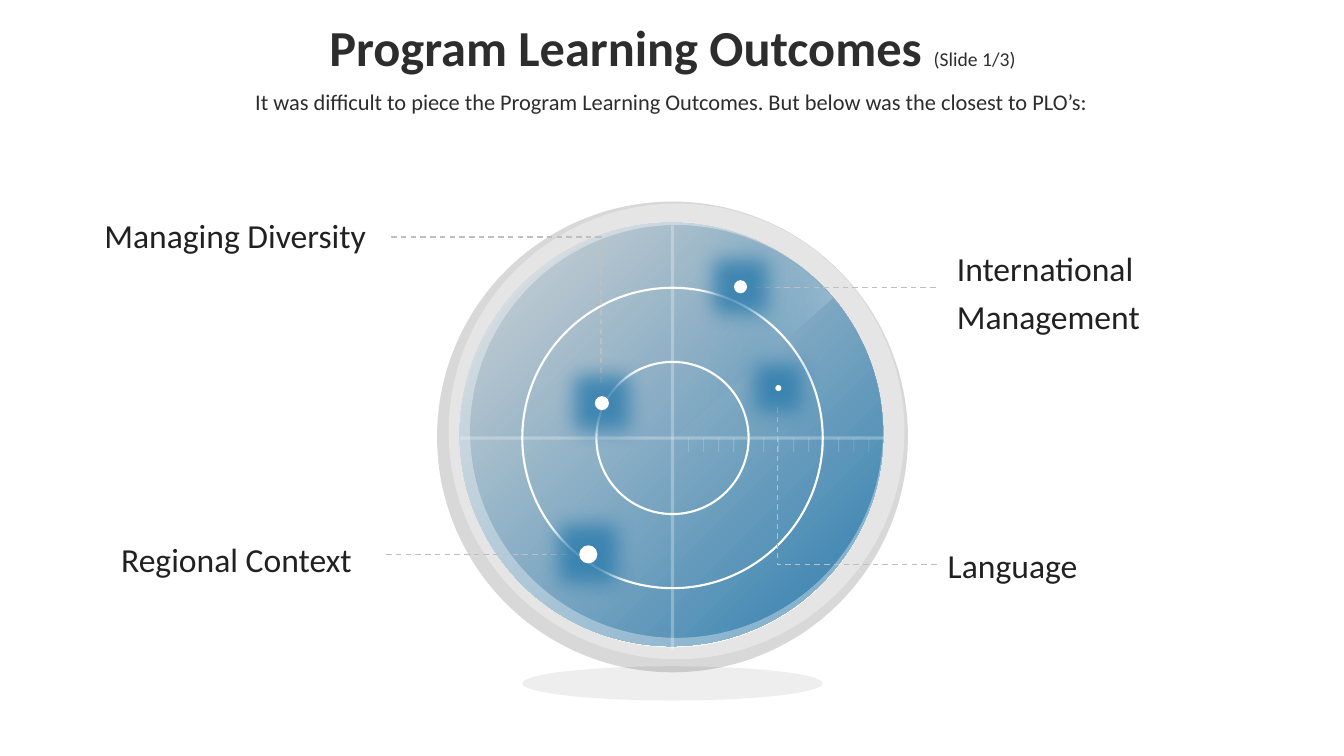
import dataclasses
import typing

import pptx
import pptx.dml.color
import pptx.enum.dml
import pptx.enum.shapes
import pptx.enum.text
import pptx.oxml
import pptx.oxml.ns
import pptx.util

Color = pptx.dml.color.RGBColor
Preset = pptx.enum.shapes.MSO_SHAPE
Align = pptx.enum.text.PP_ALIGN
Anchor = pptx.enum.text.MSO_ANCHOR
Point = tuple[float, float]

WHITE = Color(0xFF, 0xFF, 0xFF)
INK = Color(0x2D, 0x2D, 0x2D)
LABEL_INK = Color(0x21, 0x21, 0x21)
RIM_GRAY = Color(0xD8, 0xD8, 0xD8)
LEADER_GRAY = Color(0xBF, 0xBF, 0xBF)
BLUE = Color(0x2E, 0x7D, 0xAE)

FONT = "Calibri"
COLUMNS, ROWS = 133.3, 75
CENTER: Point = (66.7, 43.45)
SWEEP_RADIUS = 21.05
TICK_COUNT, TICK_GAP, TICK_LENGTH = 13, 1.49, 1.4
GLOW_RADIUS = 4


@dataclasses.dataclass(frozen=True)
class Stop:
    position: float
    color: Color
    opacity: float = 100


@dataclasses.dataclass(frozen=True)
class Outcome:
    text: str
    left: float
    top: float
    height: float
    align: Align
    dot: Point
    dot_size: float
    leader: tuple[Point, ...]


OUTCOMES = (
    Outcome("Managing Diversity", 1.7, 20, 5.5, Align.RIGHT, (59.7, 40), 1.4,
            ((38.8, 23.5), (59.6, 23.5), (59.6, 38))),
    Outcome("Language", 94, 52.8, 5.5, Align.LEFT, (77.2, 38.5), 0.6,
            ((92.9, 56), (77.1, 56), (77.1, 40.2))),
    Outcome("International Management", 94.9, 23.3, 10.4, Align.LEFT, (73.45, 28.45), 1.3,
            ((74.9, 28.5), (92.9, 28.5))),
    Outcome("Regional Context", 0.3, 52.2, 5.5, Align.RIGHT, (58.35, 55), 1.8,
            ((38.3, 55), (56.2, 55))),
)

presentation = pptx.Presentation()
presentation.slide_width = pptx.util.Inches(13.33)
presentation.slide_height = pptx.util.Inches(7.5)
slide = presentation.slides.add_slide(presentation.slide_layouts[6])


def across(columns: float) -> int:
    return round(presentation.slide_width * columns / COLUMNS)


def down(rows: float) -> int:
    return round(presentation.slide_height * rows / ROWS)


def set_opacities(element: typing.Any, *opacities: float) -> None:
    """Give each colour under the element its opacity in percent."""
    colors = list(element.iter(pptx.oxml.ns.qn("a:srgbClr")))
    for color, opacity in zip(colors, opacities):
        if opacity < 100:
            alpha = color.makeelement(pptx.oxml.ns.qn("a:alpha"), {"val": str(round(opacity * 1000))})
            color.append(alpha)


def add_round(preset: Preset, center: Point, width: float, height: float | None = None, *,
              fill: Color | None = None, opacity: float = 100,
              gradient: tuple[Stop, Stop] | None = None, angle: float = 0,
              outline: float = 0, adjustments: tuple[float, ...] = ()) -> typing.Any:
    """Add a shape around a centre, with a plain, gradient or empty fill."""
    height = width if height is None else height
    shape = slide.shapes.add_shape(
        preset, across(center[0] - width / 2), down(center[1] - height / 2),
        across(width), down(height))
    shape.shadow.inherit = False
    for index, value in enumerate(adjustments):
        shape.adjustments[index] = value
    if gradient:
        shape.fill.gradient()
        shape.fill.gradient_angle = -angle % 360
        for target, stop in zip(shape.fill.gradient_stops, gradient):
            target.position = stop.position
            target.color.rgb = stop.color
        set_opacities(shape.element, *(stop.opacity for stop in gradient))
    elif fill is not None:
        shape.fill.solid()
        shape.fill.fore_color.rgb = fill
        set_opacities(shape.element, opacity)
    else:
        shape.fill.background()
    if outline:
        shape.line.color.rgb = WHITE
        shape.line.width = pptx.util.Pt(outline)
    else:
        shape.line.fill.background()
    return shape


def add_line(start: Point, end: Point, color: Color, width: float, opacity: float = 100) -> typing.Any:
    line = slide.shapes.add_connector(
        pptx.enum.shapes.MSO_CONNECTOR.STRAIGHT,
        across(start[0]), down(start[1]), across(end[0]), down(end[1]))
    line.line.color.rgb = color
    line.line.width = pptx.util.Pt(width)
    set_opacities(line.element, opacity)
    line.element.spPr.append(pptx.oxml.parse_xml(f"<a:effectLst {pptx.oxml.ns.nsdecls('a')}/>"))
    return line


def add_leader(points: tuple[Point, ...]) -> None:
    """Add a dashed line, straight or with corners."""
    if len(points) == 2:
        shape = add_line(points[0], points[1], LEADER_GRAY, 1)
    else:
        places = [(across(x), down(y)) for x, y in points]
        builder = slide.shapes.build_freeform(*places[0])
        builder.add_line_segments(places[1:], close=False)
        shape = builder.convert_to_shape()
        shape.shadow.inherit = False
        shape.fill.background()
        shape.line.color.rgb = LEADER_GRAY
        shape.line.width = pptx.util.Pt(1)
    shape.line.dash_style = pptx.enum.dml.MSO_LINE.DASH


def add_glow(shape: typing.Any) -> None:
    effects = shape.element.spPr.find(pptx.oxml.ns.qn("a:effectLst"))
    effects.append(pptx.oxml.parse_xml(
        f'<a:glow {pptx.oxml.ns.nsdecls("a")} rad="{across(GLOW_RADIUS)}">'
        f'<a:srgbClr val="{BLUE}"><a:alpha val="80000"/></a:srgbClr></a:glow>'))


def add_text(text: str, left: float, top: float, width: float, height: float, *,
             size: float, color: Color = INK, bold: bool = False, align: Align = Align.CENTER,
             anchor: Anchor = Anchor.MIDDLE, spacing: float = 0.9, inset: float = 1,
             note: str = "", note_size: float = 14) -> None:
    """Add one paragraph, with an optional smaller note at its end."""
    box = slide.shapes.add_textbox(across(left), down(top), across(width), down(height))
    frame = box.text_frame
    frame.word_wrap = True
    frame.vertical_anchor = anchor
    frame.margin_left = frame.margin_right = across(inset)
    paragraph = frame.paragraphs[0]
    paragraph.alignment = align
    paragraph.line_spacing = spacing
    for words, points, heavy in ((text, size, bold), (note, note_size, False)):
        if words:
            run = paragraph.add_run()
            run.text = words
            run.font.name = FONT
            run.font.size = pptx.util.Pt(points)
            run.font.bold = heavy
            run.font.color.rgb = color


def draw_radar() -> None:
    x, y = CENTER
    add_round(Preset.DONUT, (x, 43.35), 46.7, fill=RIM_GRAY, adjustments=(0.053,))
    add_round(Preset.OVAL, (66.6, 43.1), 42, gradient=(Stop(0, RIM_GRAY), Stop(1, BLUE)), angle=45)
    add_round(Preset.PIE, CENTER, 2 * SWEEP_RADIUS, adjustments=(107.94, 191.28),
              gradient=(Stop(0.58, BLUE, 3), Stop(1, WHITE, 45)))
    add_round(Preset.OVAL, (x, 67.8), 29.8, 3.4, fill=INK, opacity=8)
    for diameter in (15.1, 29.8):
        add_round(Preset.OVAL, CENTER, diameter, outline=1.5)
    add_line((x, y - SWEEP_RADIUS), (x, y + SWEEP_RADIUS), WHITE, 2.25, 28)
    add_line((x - SWEEP_RADIUS, y), (x + SWEEP_RADIUS, y), WHITE, 2.25, 28)
    for index in range(TICK_COUNT):
        tick = 68.3 + index * TICK_GAP
        add_line((tick, y), (tick, y + TICK_LENGTH), WHITE, 0.5, 28)
    add_round(Preset.DONUT, (67.1, 42.8), 45.2, fill=WHITE, opacity=35, adjustments=(0.047,))


draw_radar()
for outcome in OUTCOMES:
    add_leader(outcome.leader)
for outcome in OUTCOMES:
    add_glow(add_round(Preset.OVAL, outcome.dot, outcome.dot_size, fill=WHITE))
    add_text(outcome.text, outcome.left, outcome.top, 34.6, outcome.height, size=24,
             color=LABEL_INK, align=outcome.align, anchor=Anchor.TOP, spacing=1.2, inset=0)
add_text("Program Learning Outcomes ", 3.7, 2.2, 126, 5.5, size=36, bold=True, note="(Slide 1/3)")
add_text("It was difficult to piece the Program Learning Outcomes. "
         "But below was the closest to PLO’s:", 9.1, 7.2, 115, 6, size=16)
presentation.save("out.pptx")
